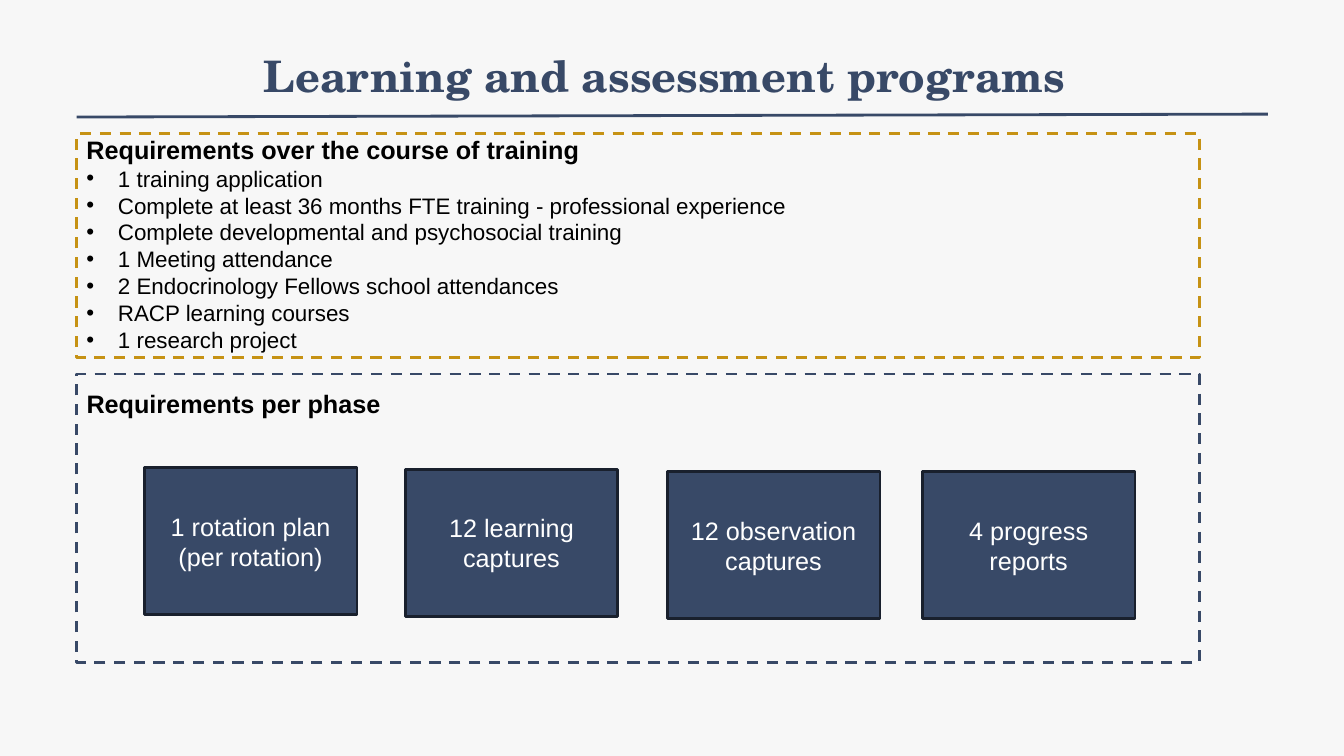
from lxml.etree import SubElement
from pptx import Presentation
from pptx.dml.color import RGBColor
from pptx.enum.dml import MSO_LINE as Dash
from pptx.enum.shapes import MSO_CONNECTOR as Link, MSO_SHAPE as Kind
from pptx.enum.text import MSO_ANCHOR as Anchor, MSO_AUTO_SIZE as Auto, PP_ALIGN as Align
from pptx.oxml.ns import qn
from pptx.util import Pt

NAVY, GOLD, EDGE = "384967", "C69214", "19202D"
BLACK, WHITE, PAPER = "000000", "FFFFFF", "F7F7F7"

TASKS = [
    "1 training application",
    "Complete at least 36 months FTE training - professional experience",
    "Complete developmental and psychosocial training",
    "1 Meeting attendance",
    "2 Endocrinology Fellows school attendances",
    "RACP learning courses",
    "1 research project",
]
# Text, left and top of each card within the phase box
CARDS = [
    ("1 rotation plan (per rotation)", 48.3, 67),
    ("12 learning captures", 234.7, 68),
    ("12 observation captures", 421.9, 69.8),
    ("4 progress reports", 604.1, 69.8),
]


def color(code):
    return RGBColor.from_string(code)


def style(para, size, code, bold=False, face="Arial"):
    for run in para.runs:
        font = run.font
        font.name, font.size, font.bold = face, Pt(size), bold
        font.color.rgb = color(code)


def place(shape, x, y, w, h):
    shape.left, shape.top, shape.width, shape.height = Pt(x), Pt(y), Pt(w), Pt(h)


def bullet(para):
    props = para._p.get_or_add_pPr()
    props.set("marL", str(Pt(22.5)))
    props.set("indent", str(-Pt(22.5)))
    SubElement(props, qn("a:buFont")).set("typeface", "Arial")
    SubElement(props, qn("a:buChar")).set("char", "•")


def rect(slide, x, y, w, h, line, fill=None):
    shape = slide.shapes.add_shape(Kind.RECTANGLE, Pt(x), Pt(y), Pt(w), Pt(h))
    shape.shadow.inherit = False
    shape.line.color.rgb = color(line)
    shape.line.width = Pt(2)
    if fill:
        shape.fill.solid()
        shape.fill.fore_color.rgb = color(fill)
    else:
        shape.fill.background()
        shape.line.dash_style = Dash.DASH
    return shape


def label(slide, x, y, w, h, head, items=()):
    """Bold heading, with bulleted items below it."""
    frame = slide.shapes.add_textbox(Pt(x), Pt(y), Pt(w), Pt(h)).text_frame
    frame.word_wrap = True
    frame.auto_size = Auto.SHAPE_TO_FIT_TEXT
    frame.text = head
    style(frame.paragraphs[0], 18, BLACK, True)
    for item in items:
        para = frame.add_paragraph()
        para.text = item
        bullet(para)
        style(para, 16, BLACK)


def header(slide, x, y, w, h):
    title = slide.shapes.title
    place(title, x + 59.5, y, 721, h)
    frame = title.text_frame
    frame.text = "Learning and assessment programs"
    frame.vertical_anchor = Anchor.MIDDLE
    para = frame.paragraphs[0]
    para.alignment = Align.CENTER
    style(para, 31, NAVY, True, "TeX Gyre Schola")
    rule = slide.shapes.add_connector(
        Link.STRAIGHT, Pt(x), Pt(y + 62.6), Pt(x + w), Pt(y + 60.5))
    rule.line.color.rgb = color(NAVY)
    rule.line.width = Pt(2)
    SubElement(rule._element.spPr, qn("a:effectLst"))


def course(slide, x, y, w, h):
    rect(slide, x, y, w, h, GOLD)
    label(slide, x, y - 2.9, 708.5, 167, "Requirements over the course of training", TASKS)


def phase(slide, x, y, w, h):
    rect(slide, x, y, w, h, NAVY)
    label(slide, x, y + 6.5, 480, 29, "Requirements per phase")
    for text, left, top in CARDS:
        card = rect(slide, x + left, y + top, 152, 105, EDGE, NAVY)
        frame = card.text_frame
        frame.word_wrap = True
        frame.text = text
        frame.vertical_anchor = Anchor.MIDDLE
        para = frame.paragraphs[0]
        para.alignment = Align.CENTER
        style(para, 18, WHITE)


def main():
    deck = Presentation()
    deck.slide_width, deck.slide_height = Pt(960), Pt(540)
    slide = deck.slides.add_slide(deck.slide_layouts[5])
    slide.background.fill.solid()
    slide.background.fill.fore_color.rgb = color(PAPER)
    header(slide, 54.7, 21, 851, 65.5)
    course(slide, 54.7, 95.5, 802, 160)
    phase(slide, 54.7, 267.2, 802, 206)
    deck.save("out.pptx")


if __name__ == "__main__":
    main()
